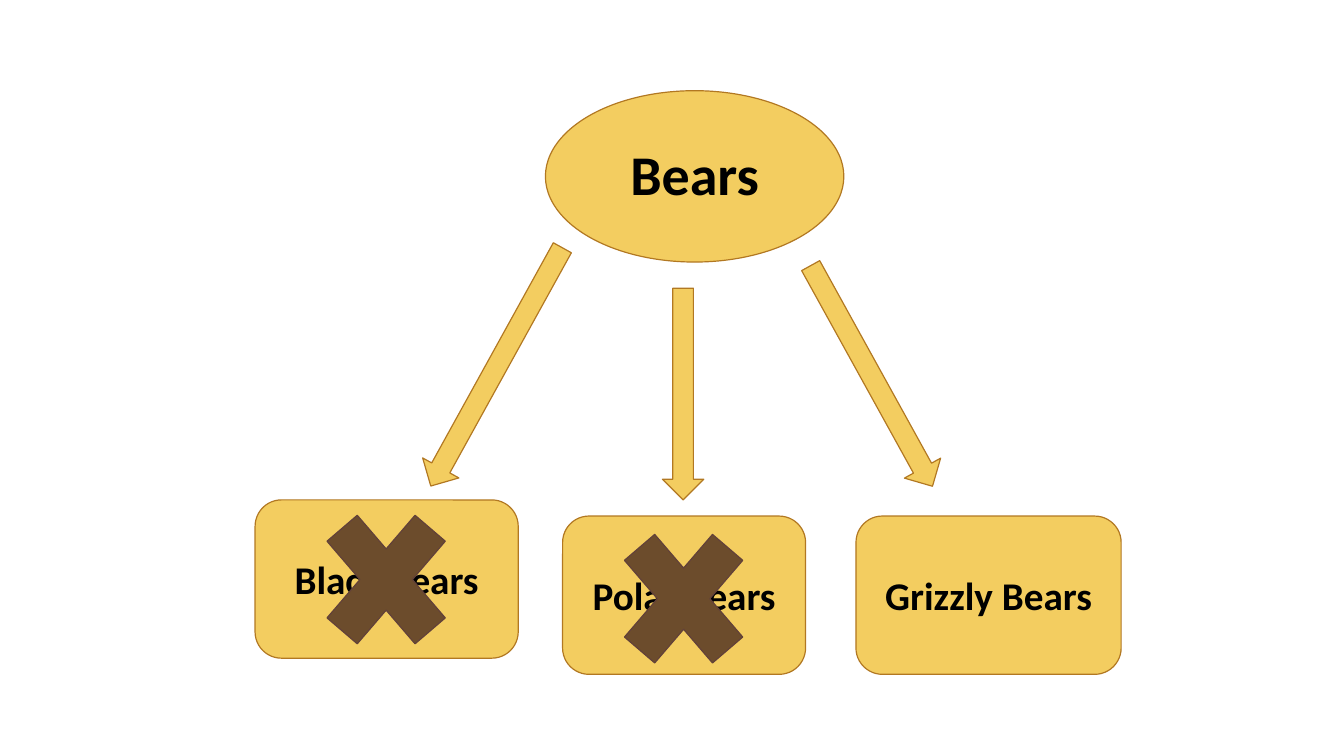
from pptx import Presentation
from pptx.dml.color import RGBColor
from pptx.enum.shapes import MSO_SHAPE
from pptx.enum.text import MSO_ANCHOR, PP_ALIGN
from pptx.util import Inches, Pt

ELLIPSE = MSO_SHAPE.OVAL
ROUNDED = MSO_SHAPE.ROUNDED_RECTANGLE
ARROW = MSO_SHAPE.DOWN_ARROW
CROSS = MSO_SHAPE.MATH_MULTIPLY
CENTER = PP_ALIGN.CENTER
MIDDLE = MSO_ANCHOR.MIDDLE

GOLD = RGBColor(0xF3, 0xCD, 0x60)
GOLD_LINE = RGBColor(0xB2, 0x78, 0x22)
BROWN = RGBColor(0x6C, 0x4C, 0x2C)
BROWN_LINE = RGBColor(0x62, 0x41, 0x39)
BLACK = RGBColor(0, 0, 0)

FONT = "Calibri"
ARROW_WIDTH = 0.41
BOX_HEIGHT = 1.57
CROSS_SIZE = (1.68, 1.96)


def add_figure(s, kind, left, top, width, height, fill=GOLD, line=GOLD_LINE):
    sp = s.shapes.add_shape(kind, Inches(left), Inches(top),
                            Inches(width), Inches(height))
    sp.shadow.inherit = False
    sp.fill.solid()
    sp.fill.fore_color.rgb = fill
    sp.line.color.rgb = line
    sp.line.width = Pt(0.85)
    return sp


def add_label(sp, text, size):
    tf = sp.text_frame
    tf.word_wrap = True
    tf.vertical_anchor = MIDDLE
    tf.text = text
    p = tf.paragraphs[0]
    p.alignment = CENTER
    font = p.runs[0].font
    font.name = FONT
    font.size = Pt(size)
    font.bold = True
    font.color.rgb = BLACK
    return p


def add_topic(s, text):
    sp = add_figure(s, ELLIPSE, 5.41, 0.9, 2.96, 1.7)
    p = add_label(sp, text, 40)
    p.line_spacing = Pt(44)


def add_arrow(s, left, top, length, angle):
    sp = add_figure(s, ARROW, left, top, ARROW_WIDTH, length)
    sp.rotation = angle


def add_box(s, text, left, top, width):
    sp = add_figure(s, ROUNDED, left, top, width, BOX_HEIGHT)
    add_label(sp, text, 28)


def add_cross(s, left, top):
    add_figure(s, CROSS, left, top, *CROSS_SIZE, BROWN, BROWN_LINE)


def main():
    prs = Presentation()
    prs.slide_width = Inches(13.33)
    prs.slide_height = Inches(7.5)
    s = prs.slides.add_slide(prs.slide_layouts[6])

    add_topic(s, "Bears")
    for left, top, length, angle in [(4.72, 2.29, 2.7, 28.9),
                                     (6.57, 2.86, 2.1, 0),
                                     (8.44, 2.48, 2.5, -28.9)]:
        add_arrow(s, left, top, length, angle)
    for text, left, top, width in [("Black bears", 2.53, 4.96, 2.61),
                                   ("Polar Bears", 5.58, 5.12, 2.41),
                                   ("Grizzly Bears", 8.49, 5.12, 2.63)]:
        add_box(s, text, left, top, width)
    for left, top in [(2.99, 4.77), (5.94, 4.96)]:
        add_cross(s, left, top)

    prs.save("out.pptx")


if __name__ == "__main__":
    main()
